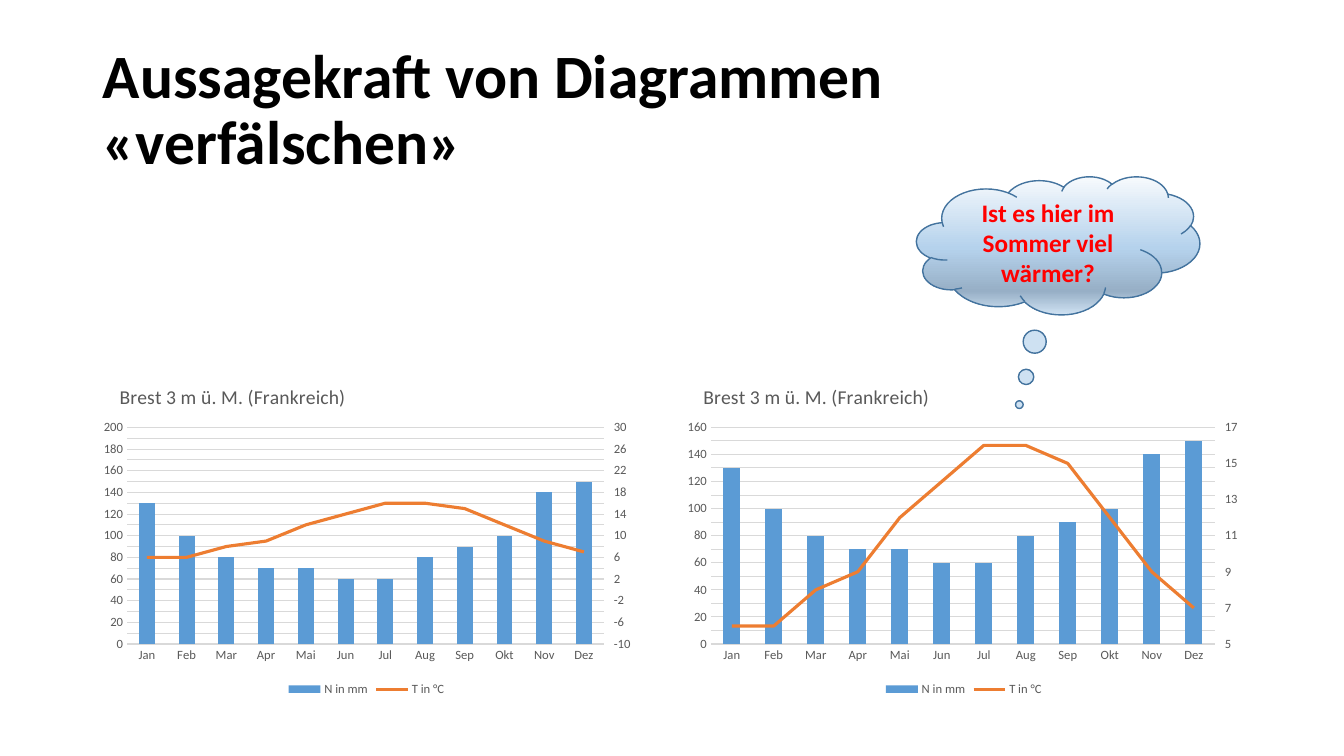
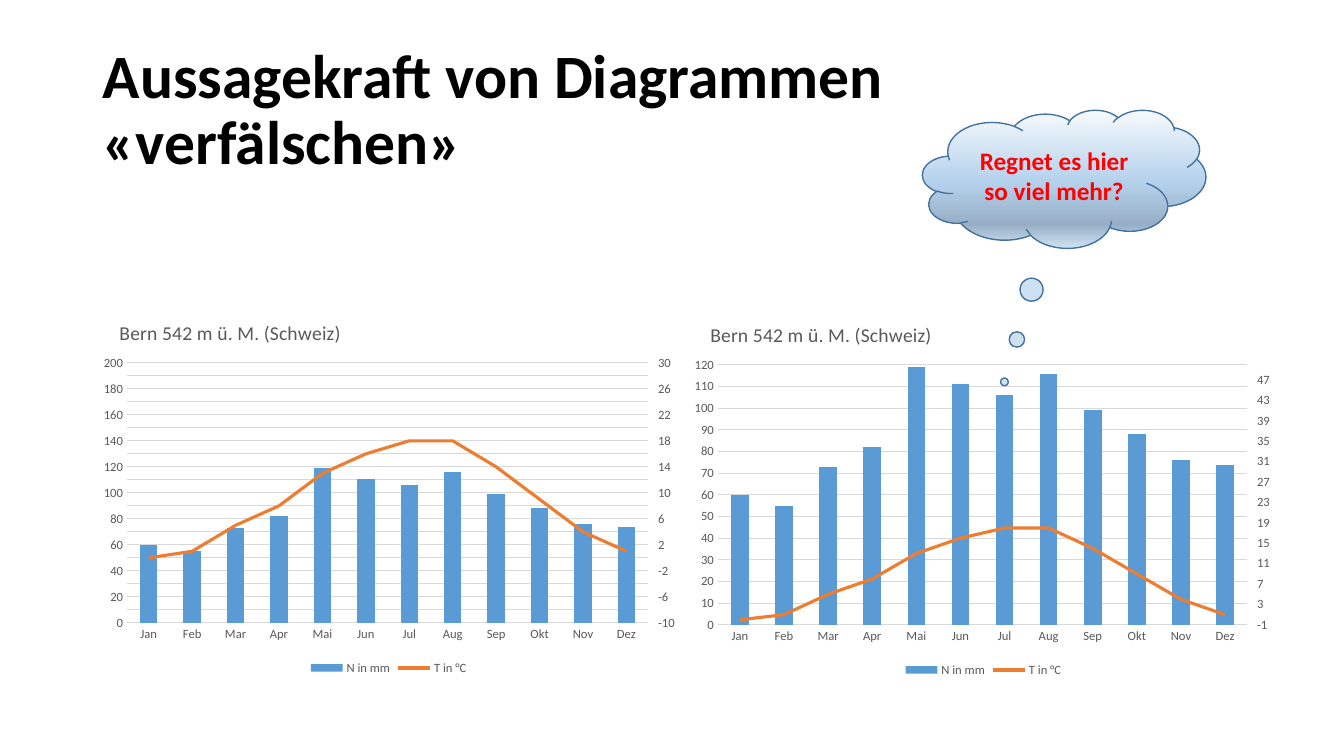
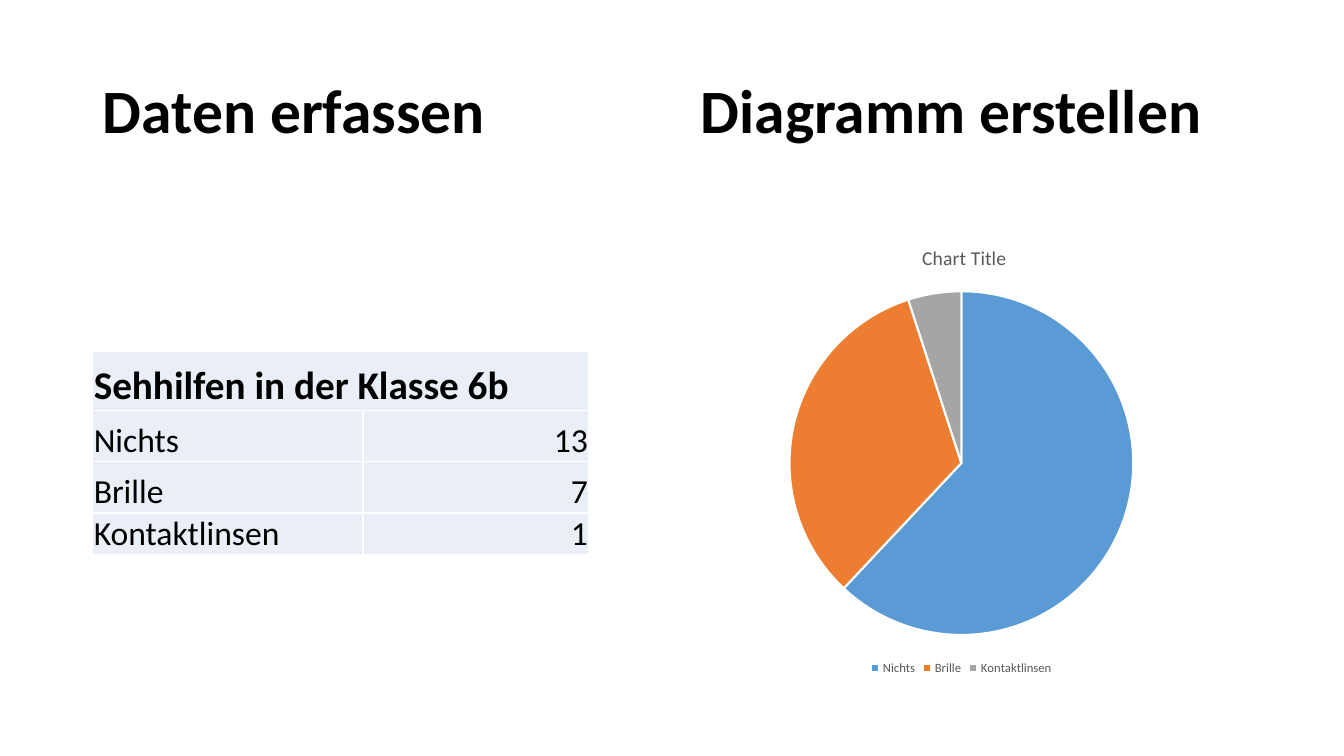
from copy import deepcopy

from lxml.etree import SubElement
from pptx import Presentation
from pptx.chart.axis import ValueAxis
from pptx.chart.data import CategoryChartData
from pptx.dml.color import RGBColor
from pptx.enum.chart import XL_CHART_TYPE, XL_LEGEND_POSITION, XL_MARKER_STYLE, XL_TICK_MARK
from pptx.enum.shapes import MSO_SHAPE
from pptx.enum.text import MSO_ANCHOR, MSO_AUTO_SIZE, PP_ALIGN
from pptx.oxml import parse_xml
from pptx.oxml.ns import nsdecls, qn
from pptx.util import Inches, Pt

COLUMNS, PIE = XL_CHART_TYPE.COLUMN_CLUSTERED, XL_CHART_TYPE.PIE
BELOW = XL_LEGEND_POSITION.BOTTOM
UNMARKED = XL_MARKER_STYLE.NONE
NO_TICK, OUT_TICK = XL_TICK_MARK.NONE, XL_TICK_MARK.OUTSIDE
CLOUD = MSO_SHAPE.CLOUD_CALLOUT
MIDDLE, BOTTOM = MSO_ANCHOR.MIDDLE, MSO_ANCHOR.BOTTOM
NO_FIT = MSO_AUTO_SIZE.NONE
LEFT, CENTER, RIGHT = PP_ALIGN.LEFT, PP_ALIGN.CENTER, PP_ALIGN.RIGHT

BLACK = RGBColor(0x00, 0x00, 0x00)
WHITE = RGBColor(0xFF, 0xFF, 0xFF)
RED = RGBColor(0xFF, 0x00, 0x00)
GRAY = RGBColor(0x59, 0x59, 0x59)
PALE = RGBColor(0xD9, 0xD9, 0xD9)
BLUE = RGBColor(0x5B, 0x9B, 0xD5)
ORANGE = RGBColor(0xED, 0x7D, 0x31)
SILVER = RGBColor(0xA5, 0xA5, 0xA5)
NAVY = RGBColor(0x43, 0x73, 0x9E)
ICE = RGBColor(0xEA, 0xEF, 0xF7)
SKY = (
    (0, RGBColor(0xF7, 0xFA, 0xFD)),
    (52, RGBColor(0xB5, 0xD2, 0xEC)),
    (83, RGBColor(0x97, 0xAF, 0xC6)),
    (100, RGBColor(0xCE, 0xE1, 0xF2)),
)

FONT = "Calibri"
WIDTH, HEIGHT = 13.33, 7.5
MARGIN = 0.92
CLOUD_SIZE = (2.81, 1.37)
PLOT_LEFT, PLOT_TOP, PLOT_RIGHT, PLOT_BASE = 0.34, 0.62, 0.36, 0.56
HEAD_LEFT, HEAD_TOP = 0.23, 0.15
MONTHS = "Jan Feb Mar Apr Mai Jun Jul Aug Sep Okt Nov Dez".split()
SKEW = "Aussagekraft von Diagrammen «verfälschen»"

BREST = (
    "Brest 3 m ü. M. (Frankreich)",
    (130, 100, 80, 70, 70, 60, 60, 80, 90, 100, 140, 150),
    (6, 6, 8, 9, 12, 14, 16, 16, 15, 12, 9, 7),
)
BERN = (
    "Bern 542 m ü. M. (Schweiz)",
    (60, 55, 73, 82, 119, 111, 106, 116, 99, 88, 76, 74),
    (0, 1, 5, 8, 13, 16, 18, 18, 14, 9, 4, 1),
)
CLIMATES = (
    (BREST, "Ist es hier im Sommer viel wärmer?", (9.09, 1.75), (-0.137, 1.153),
     (((MARGIN, 3.62, 5.43, 3.33), 200, -10, 30),
      ((6.71, 3.62, 5.7, 3.33), 160, 5, 17))),
    (BERN, "Regnet es hier so viel mehr?", (9.15, 1.09), (-0.211, 1.47),
     (((MARGIN, 2.98, 5.87, 3.76), 200, -10, 30),
      ((6.78, 3, 5.95, 3.76), 120, -1, 50))),
)
AIDS = (("Nichts", "13"), ("Brille", "7"), ("Kontaktlinsen", "1"))
SHARES = (62, 33, 5)


def inches(*sizes):
    """Turn numbers into lengths."""
    return [Inches(size) for size in sizes]


def style(font, size, color, bold=False):
    """Format one font."""
    font.name, font.size, font.bold = FONT, Pt(size), bold
    font.color.rgb = color


def write(frame, text, size, color, bold=False, align=LEFT):
    """Fill a text frame with one formatted paragraph."""
    frame.text = text
    frame.word_wrap = True
    para = frame.paragraphs[0]
    para.alignment = align
    for run in para.runs:
        style(run.font, size, color, bold)
    return para


def start(deck, text, high=1.41, tab=None):
    """Add a slide with its title."""
    slide = deck.slides.add_slide(deck.slide_layouts[5])
    title = slide.shapes.title
    title.left, title.top, title.width, title.height = inches(
        MARGIN, 0.4, WIDTH - 2 * MARGIN, high)
    frame = title.text_frame
    frame.auto_size, frame.vertical_anchor = NO_FIT, MIDDLE
    para = write(frame, text, 44, BLACK, True)
    para.line_spacing = 0.9
    if tab:
        stops = SubElement(para._p.get_or_add_pPr(), qn("a:tabLst"))
        SubElement(stops, qn("a:tab"), pos=str(Inches(tab)), algn="l")
    return slide


def cloud(slide, text, spot, tail):
    """Add a thought cloud whose bubbles lead to the tail."""
    shape = slide.shapes.add_shape(CLOUD, *inches(*spot, *CLOUD_SIZE))
    shape.shadow.inherit = False
    for index, share in enumerate(tail):
        shape.adjustments[index] = share
    shape.fill.gradient()
    shape.fill.gradient_angle = 270
    stops = shape._element.xpath("p:spPr/a:gradFill/a:gsLst")[0]
    for old in list(stops):
        stops.remove(old)
    for place, color in SKY:
        stop = SubElement(stops, qn("a:gs"), pos=str(place * 1000))
        SubElement(stop, qn("a:srgbClr"), val=str(color))
    shape.line.color.rgb, shape.line.width = NAVY, Pt(1)
    shape.text_frame.vertical_anchor = MIDDLE
    write(shape.text_frame, text, 18, RED, True, CENTER)


def place(part, index, **shares):
    """Give a chart part a fixed layout."""
    for old in part.xpath("c:layout"):
        part.remove(old)
    layout = parse_xml(f"<c:layout {nsdecls('c')}><c:manualLayout/></c:layout>")
    box = layout[0]
    if "w" in shares:
        SubElement(box, qn("c:layoutTarget"), val="inner")
    for side in "xy":
        SubElement(box, qn(f"c:{side}Mode"), val="edge")
    for side, share in shares.items():
        SubElement(box, qn(f"c:{side}"), val=f"{share:.4f}")
    part.insert(index, layout)


def graph(slide, kind, box, data, head, left, plot):
    """Add a chart with heading, legend and a plot area in inches."""
    chart = slide.shapes.add_chart(kind, *inches(*box), data).chart
    wide, high = box[2:]
    style(chart.font, 9, GRAY)
    chart.has_title = chart.has_legend = True
    write(chart.chart_title.text_frame, head, 14, GRAY)
    place(chart.chart_title._element, 1, x=left / wide, y=HEAD_TOP / high)
    chart.legend.position = BELOW
    chart.legend.include_in_layout = False
    x, y, w, h = plot
    place(chart.element.xpath("c:chart/c:plotArea")[0], 0,
          x=x / wide, y=y / high, w=w / wide, h=h / high)
    return chart


def scale(axis, low, top, step, tick):
    """Set the range and ticks of a value axis."""
    axis.minimum_scale, axis.maximum_scale, axis.major_unit = low, top, step
    axis.major_tick_mark = tick


def second(chart, low, top):
    """Move the last series to a line on a right-hand axis."""
    bars = chart.plots[0]._element
    base, side = chart.category_axis._element, chart.value_axis._element
    row = bars.xpath("c:ser")[1]
    for flag in row.xpath("c:invertIfNegative"):
        row.remove(flag)
    line = parse_xml(
        f"<c:lineChart {nsdecls('c')}><c:grouping val='standard'/>"
        "<c:varyColors val='0'/><c:marker val='1'/>"
        "<c:axId val='101'/><c:axId val='102'/></c:lineChart>")
    line.insert(2, row)
    bars.addnext(line)
    months, warmth = deepcopy(base), deepcopy(side)
    for axis, own, other in ((months, "101", "102"), (warmth, "102", "101")):
        axis.xpath("c:axId")[0].set("val", own)
        axis.xpath("c:crossAx")[0].set("val", other)
    months.xpath("c:delete")[0].set("val", "1")
    warmth.xpath("c:axPos")[0].set("val", "r")
    warmth.xpath("c:crosses")[0].set("val", "max")
    side.addnext(warmth)
    warmth.addnext(months)
    right = ValueAxis(warmth)
    right.has_major_gridlines = False
    scale(right, low, top, 2, OUT_TICK)


def climate(slide, place_data, box, top, low, high):
    """Add a climate chart of rain columns and a temperature line."""
    head, rain, warmth = place_data
    data = CategoryChartData()
    data.categories = MONTHS
    data.add_series("N in mm", rain)
    data.add_series("T in °C", warmth)
    plot = (PLOT_LEFT, PLOT_TOP, box[2] - PLOT_LEFT - PLOT_RIGHT,
            box[3] - PLOT_TOP - PLOT_BASE)
    chart = graph(slide, COLUMNS, box, data, head, HEAD_LEFT, plot)
    base, side = chart.category_axis, chart.value_axis
    base.major_tick_mark = NO_TICK
    scale(side, 0, top, 10, NO_TICK)
    side.format.line.fill.background()
    side.tick_labels.number_format = "General"
    side.tick_labels.number_format_is_linked = False
    for part in (base, side.major_gridlines):
        part.format.line.color.rgb = PALE
        part.format.line.width = Pt(0.75)
    second(chart, low, high)
    bars, line = chart.plots
    bars.gap_width, bars.vary_by_categories = 150, False
    bars.series[0].format.fill.solid()
    bars.series[0].format.fill.fore_color.rgb = BLUE
    curve = line.series[0]
    curve.smooth = False
    curve.marker.style = UNMARKED
    curve.format.line.color.rgb, curve.format.line.width = ORANGE, Pt(2.25)


def pie(slide):
    """Add the pie of visual aids."""
    data = CategoryChartData()
    data.categories = [name for name, count in AIDS]
    data.add_series("Series 1", SHARES)
    chart = graph(slide, PIE, (6.24, 2.24, 6.59, 4.5), data, "Chart Title",
                  2.87, (1.59, 0.65, 3.41, 3.41))
    chart.plots[0].vary_by_categories = True
    for index, color in enumerate((BLUE, ORANGE, SILVER)):
        form = chart.plots[0].series[0].points[index].format
        form.fill.solid()
        form.fill.fore_color.rgb = color
        form.line.color.rgb, form.line.width = WHITE, Pt(1.5)


def fill(cell, text, size, bold, align):
    """Format one table cell with white borders."""
    write(cell.text_frame, text, size, BLACK, bold, align)
    cell.vertical_anchor = BOTTOM
    cell.margin_left = cell.margin_right = cell.margin_top = Inches(0.01)
    cell.margin_bottom = 0
    props = cell._tc.get_or_add_tcPr()
    for side in "LRTB":
        edge = SubElement(props, qn(f"a:ln{side}"), w=str(Pt(1)))
        paint = SubElement(edge, qn("a:solidFill"))
        SubElement(paint, qn("a:srgbClr"), val=str(WHITE))
    cell.fill.solid()
    cell.fill.fore_color.rgb = ICE


def table(slide):
    """Add the table of visual aids."""
    wide, high = (2.68, 2.24), (0.58, 0.51, 0.51, 0.41)
    grid = slide.shapes.add_table(
        len(high), len(wide), *inches(MARGIN, 3.49, sum(wide), sum(high))).table
    grid.first_row = grid.horz_banding = False
    for col, size in zip(grid.columns, wide):
        col.width = Inches(size)
    for row, size in zip(grid.rows, high):
        row.height = Inches(size)
    grid.cell(0, 0).merge(grid.cell(0, 1))
    rows = (("Sehhilfen in der Klasse 6b", ""),) + AIDS
    for r, texts in enumerate(rows):
        for c, text in enumerate(texts):
            fill(grid.cell(r, c), text, 24 if r else 28, r == 0, RIGHT if c else LEFT)


def main():
    """Build and save the deck."""
    deck = Presentation()
    deck.slide_width, deck.slide_height = inches(WIDTH, HEIGHT)
    for town, text, spot, tail, charts in CLIMATES:
        slide = start(deck, SKEW)
        for chart in charts:
            climate(slide, town, *chart)
        cloud(slide, text, spot, tail)
    slide = start(deck, "Daten erfassen\tDiagramm erstellen", 1.45, 5.93)
    table(slide)
    pie(slide)
    deck.save("out.pptx")


if __name__ == "__main__":
    main()
